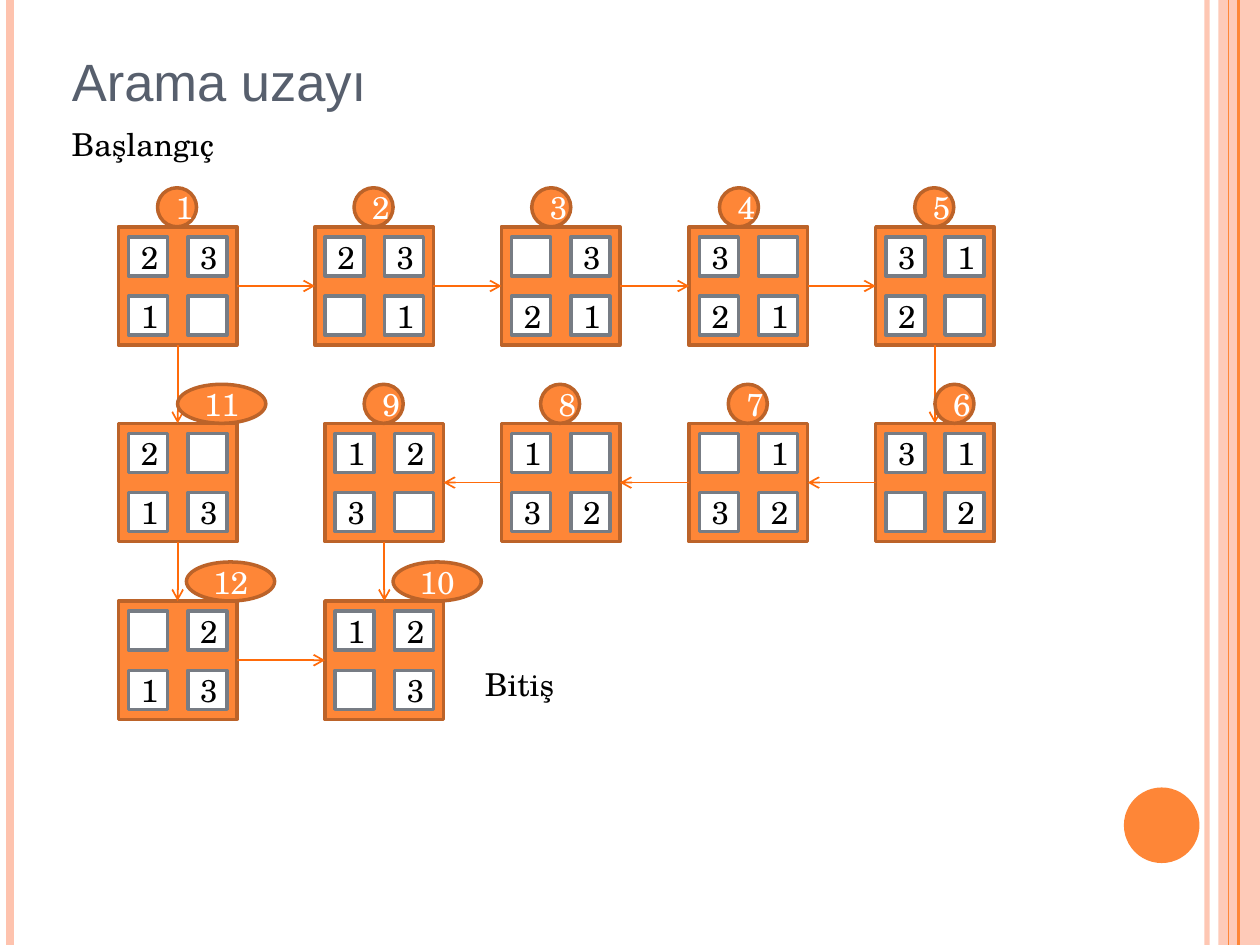
from dataclasses import dataclass

from lxml import etree
from pptx import Presentation
from pptx import util as u
from pptx.dml.color import RGBColor
from pptx.enum import shapes as sh
from pptx.enum import text as tx
from pptx.oxml.ns import qn


@dataclass(frozen=True)
class Theme:
    orange: str = "FE8637"
    rust: str = "BC6329"
    arrow: str = "FF6B0A"
    peach: str = "FEC3AE"
    gray: str = "777C84"
    slate: str = "575F6D"
    white: str = "FFFFFF"
    black: str = "000000"
    head: str = "Arial"
    body: str = "TeX Gyre Schola"
    big: float = 30
    small: float = 18
    edge: float = 2


@dataclass(frozen=True)
class State:
    """A puzzle board; tiles run row by row, 0 is the gap."""
    num: int
    left: float
    top: float
    tiles: tuple[int, int, int, int]
    shift: float  # badge offset from the board's left edge


@dataclass(frozen=True)
class Stripe:
    x: float
    color: str
    width: float
    alpha: int = 100


THEME = Theme()
BOARD, TILE, PAD, STEP = 0.94, 0.31, 0.08, 0.47
WIDE = 0.7  # badge width for two digits
COLS = (0.94, 2.58, 3.98, 5.47, 6.95)
ROWS = (1.8, 3.36, 4.77)
TOP, LEFT, BOTTOM, RIGHT = range(4)  # connection sites of a rectangle

STATES = (
    State(1, COLS[0], ROWS[0], (2, 3, 1, 0), 0.31),
    State(2, 2.5, ROWS[0], (2, 3, 0, 1), 0.31),
    State(3, COLS[2], ROWS[0], (0, 3, 2, 1), 0.24),
    State(4, COLS[3], ROWS[0], (3, 0, 2, 1), 0.24),
    State(5, COLS[4], ROWS[0], (3, 1, 2, 0), 0.31),
    State(6, COLS[4], ROWS[1], (3, 1, 0, 2), 0.47),
    State(7, COLS[3], ROWS[1], (0, 1, 3, 2), 0.31),
    State(8, COLS[2], ROWS[1], (1, 0, 3, 2), 0.31),
    State(9, COLS[1], ROWS[1], (1, 2, 3, 0), 0.31),
    State(10, COLS[1], ROWS[2], (1, 2, 0, 3), 0.54),
    State(11, COLS[0], ROWS[1], (2, 0, 1, 3), 0.47),
    State(12, COLS[0], ROWS[2], (0, 2, 1, 3), 0.54),
)
MOVES = tuple((n, n + 1) for n in range(1, 10)) + ((1, 11), (11, 12), (12, 10))
STRIPES = (
    Stripe(9.58, THEME.peach, 3, 93),
    Stripe(0.08, THEME.peach, 4.5),
    Stripe(9.83, THEME.orange, 1.5),
    Stripe(9.75, THEME.orange, 0.75),
)


def style(para, font: str, size: float, color: str) -> None:
    for run in para.runs:
        run.font.name = font
        run.font.size = u.Pt(size)
        run.font.color.rgb = RGBColor.from_string(color)


def fade(node, alpha: int) -> None:
    """Set the opacity, in percent, of the first colour below node."""
    color = next(node.iter(qn("a:srgbClr")))
    etree.SubElement(color, qn("a:alpha")).set("val", str(alpha * 1000))


def draw_shape(parent, kind, box, fill: str, edge: str = "",
               label: str = "", ink: str = THEME.black):
    shape = parent.add_shape(kind, *map(u.Inches, box))
    shape.shadow.inherit = False
    shape.fill.solid()
    shape.fill.fore_color.rgb = RGBColor.from_string(fill)
    if edge:
        shape.line.color.rgb = RGBColor.from_string(edge)
        shape.line.width = u.Pt(THEME.edge)
    else:
        shape.line.fill.background()
    if label:
        frame = shape.text_frame
        frame.text = label
        frame.vertical_anchor = tx.MSO_ANCHOR.MIDDLE
        para = frame.paragraphs[0]
        para.alignment = tx.PP_ALIGN.CENTER
        style(para, THEME.body, THEME.small, ink)
    return shape


def draw_line(parent, ends, color: str, width: float):
    line = parent.add_connector(sh.MSO_CONNECTOR.STRAIGHT, *map(u.Inches, ends))
    line.line.color.rgb = RGBColor.from_string(color)
    line.line.width = u.Pt(width)
    etree.SubElement(line._element.spPr, qn("a:effectLst"))
    return line


def draw_board(parent, state: State):
    group = parent.add_group_shape().shapes
    rect = sh.MSO_SHAPE.RECTANGLE
    board = draw_shape(group, rect, (state.left, state.top, BOARD, BOARD),
                       THEME.orange, THEME.rust)
    for i, tile in enumerate(state.tiles):
        row, col = divmod(i, 2)
        box = (state.left + PAD + col * STEP, state.top + PAD + row * STEP, TILE, TILE)
        draw_shape(group, rect, box, THEME.white, THEME.gray, str(tile or ""))
    return board


def draw_badge(parent, state: State) -> None:
    width = WIDE if state.num > 9 else TILE
    box = (state.left + state.shift, state.top - TILE, width, TILE)
    draw_shape(parent, sh.MSO_SHAPE.OVAL, box, THEME.orange, THEME.rust,
               str(state.num), THEME.white)


def draw_move(parent, start, end) -> None:
    if start.top != end.top:
        sites = BOTTOM, TOP
    elif start.left < end.left:
        sites = RIGHT, LEFT
    else:
        sites = LEFT, RIGHT
    line = draw_line(parent, (0, 0, 0, 0), THEME.arrow, 1)
    line.begin_connect(start, sites[0])
    line.end_connect(end, sites[1])
    outline = line._element.spPr.find(qn("a:ln"))
    etree.SubElement(outline, qn("a:tailEnd")).set("type", "arrow")


def draw_label(parent, box, words: str) -> None:
    frame = parent.add_textbox(*map(u.Inches, box)).text_frame
    frame.text = words
    frame.word_wrap = False
    frame.auto_size = tx.MSO_AUTO_SIZE.SHAPE_TO_FIT_TEXT
    style(frame.paragraphs[0], THEME.body, THEME.small, THEME.black)


def main() -> None:
    deck = Presentation()
    deck.slide_width, deck.slide_height = u.Inches(10), u.Inches(7.5)
    slide = deck.slides.add_slide(deck.slide_layouts[5])
    parts = slide.shapes

    # Side decoration
    band = draw_shape(parts, sh.MSO_SHAPE.RECTANGLE, (9.67, 0, 0.33, 7.5), THEME.peach)
    fade(band._element.spPr, 87)
    for stripe in STRIPES:
        line = draw_line(parts, (stripe.x, 0, stripe.x, 7.5), stripe.color, stripe.width)
        if stripe.alpha < 100:
            fade(line._element.spPr, stripe.alpha)
    draw_shape(parts, sh.MSO_SHAPE.OVAL, (8.92, 6.25, 0.6, 0.6), THEME.orange)

    # Title
    title = parts.title
    title.left, title.top, title.width, title.height = map(
        u.Inches, (0.47, 0.16, 8.17, 0.78))
    title.text_frame.text = "Arama uzayı"
    title.text_frame.vertical_anchor = tx.MSO_ANCHOR.BOTTOM
    para = title.text_frame.paragraphs[0]
    para.alignment = tx.PP_ALIGN.LEFT
    style(para, THEME.head, THEME.big, THEME.slate)

    # Search graph
    boards = {state.num: draw_board(parts, state) for state in STATES}
    for start, end in MOVES:
        draw_move(parts, boards[start], boards[end])
    for state in STATES:
        draw_badge(parts, state)

    # Start and finish labels
    draw_label(parts, (0.47, 0.94, 1.34, 0.4), "Başlangıç")
    draw_label(parts, (3.75, 5.23, 0.76, 0.4), "Bitiş")

    deck.save("out.pptx")


if __name__ == "__main__":
    main()
